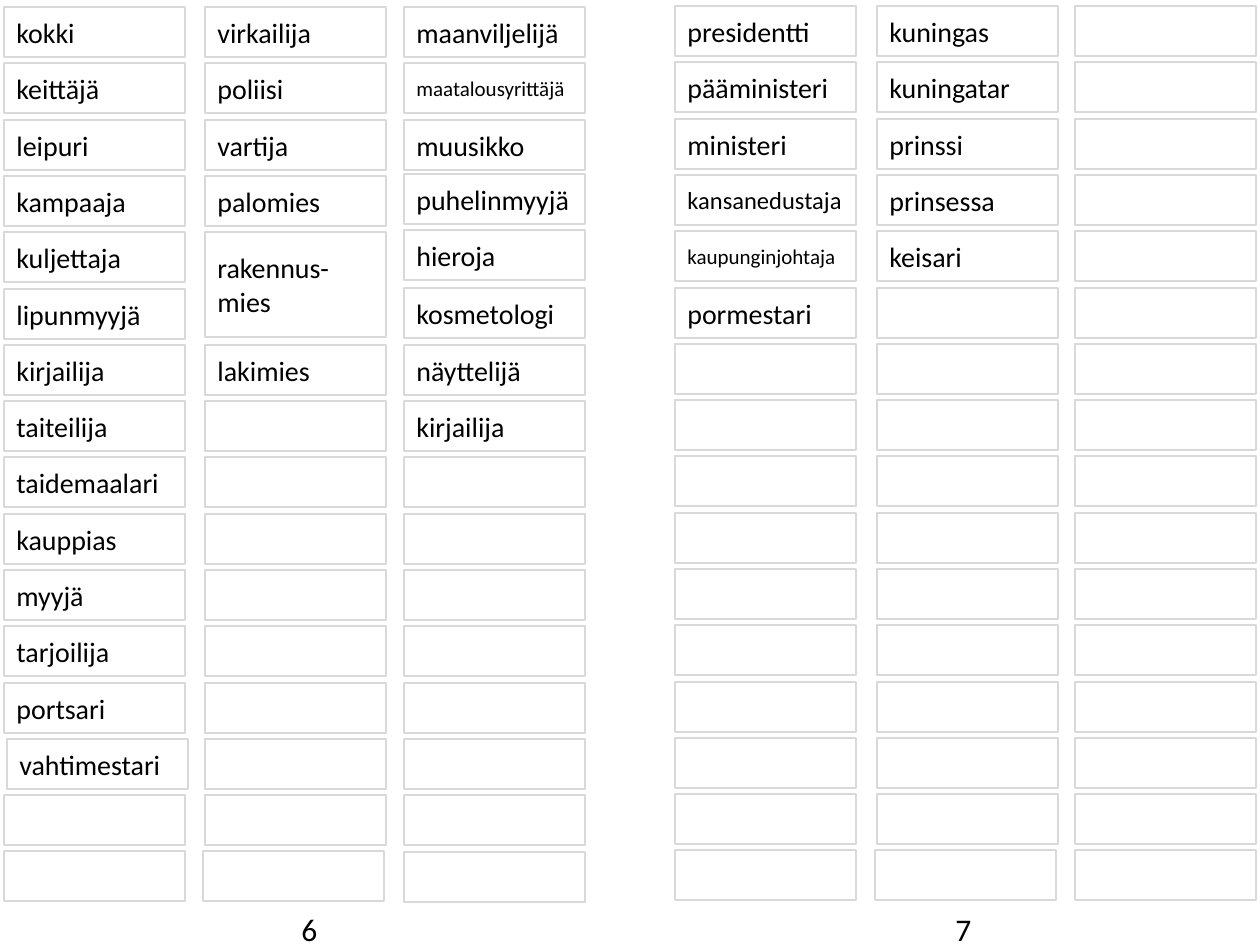
from pptx import Presentation
from pptx import util as u
from pptx.dml.color import RGBColor
from pptx.enum import shapes, text

SCALE = 914400 / 126
COLORS = {"border": "D9D9D9", "ink": "000000"}
FONT = "Calibri"
ROWS, PITCH = 16, 56.3
CARD_W, CARD_H, TALL_H = 181, 50, 105


def px(*lengths):
    return [u.Emu(round(n * SCALE)) for n in lengths]


def style(frame, size):
    frame.paragraphs[0].alignment = text.PP_ALIGN.LEFT
    for run in frame.paragraphs[0].runs:
        run.font.name = FONT
        run.font.size = u.Pt(size)
        run.font.color.rgb = RGBColor.from_string(COLORS["ink"])


columns = [
    (4, 7, ["kokki", "keittäjä", "leipuri", "kampaaja", "kuljettaja", "lipunmyyjä",
            "kirjailija", "taiteilija", "taidemaalari", "kauppias", "myyjä",
            "tarjoilija", "portsari", "vahtimestari"]),
    (205, 7, ["virkailija", "poliisi", "vartija", "palomies", "rakennus-mies", None,
              "lakimies"]),
    (404, 7, ["maanviljelijä", "maatalousyrittäjä", "muusikko", "puhelinmyyjä",
              "hieroja", "kosmetologi", "näyttelijä", "kirjailija"]),
    (675, 6, ["presidentti", "pääministeri", "ministeri", "kansanedustaja",
              "kaupunginjohtaja", "pormestari"]),
    (877, 6, ["kuningas", "kuningatar", "prinssi", "prinsessa", "keisari"]),
    (1075, 6, []),
]
small_sizes = {"maatalousyrittäjä": 12, "kansanedustaja": 14, "kaupunginjohtaja": 12}
nudges = {(0, 13): (3, 0), (1, 15): (-2, 0), (4, 15): (-2, 0),
          (2, 3): (0, -2), (2, 4): (0, -2), (2, 5): (0, -1), (2, 15): (0, 1)}

prs = Presentation()
prs.slide_width, prs.slide_height = px(1260, 945)
slide = prs.slides.add_slide(prs.slide_layouts[6])

for left, number in [(289, "6"), (943, "7")]:
    page = slide.shapes.add_textbox(*px(left, 904, 45, 50))
    page.text_frame.word_wrap = True
    page.text_frame.text = number
    style(page.text_frame, 18)

for col, (left, top, jobs) in enumerate(columns):
    for row in range(ROWS):
        job = jobs[row] if row < len(jobs) else ""
        if job is None:
            continue
        dx, dy = nudges.get((col, row), (0, 0))
        height = TALL_H if job == "rakennus-mies" else CARD_H
        card = slide.shapes.add_shape(
            shapes.MSO_SHAPE.RECTANGLE,
            *px(left + dx, top + round(row * PITCH) + dy, CARD_W, height))
        card.shadow.inherit = False
        card.fill.background()
        card.line.color.rgb = RGBColor.from_string(COLORS["border"])
        card.line.width = u.Pt(1)
        card.text_frame.vertical_anchor = text.MSO_ANCHOR.MIDDLE
        card.text_frame.word_wrap = True
        if job:
            card.text_frame.text = job
            style(card.text_frame, small_sizes.get(job, 16))

prs.save("out.pptx")
